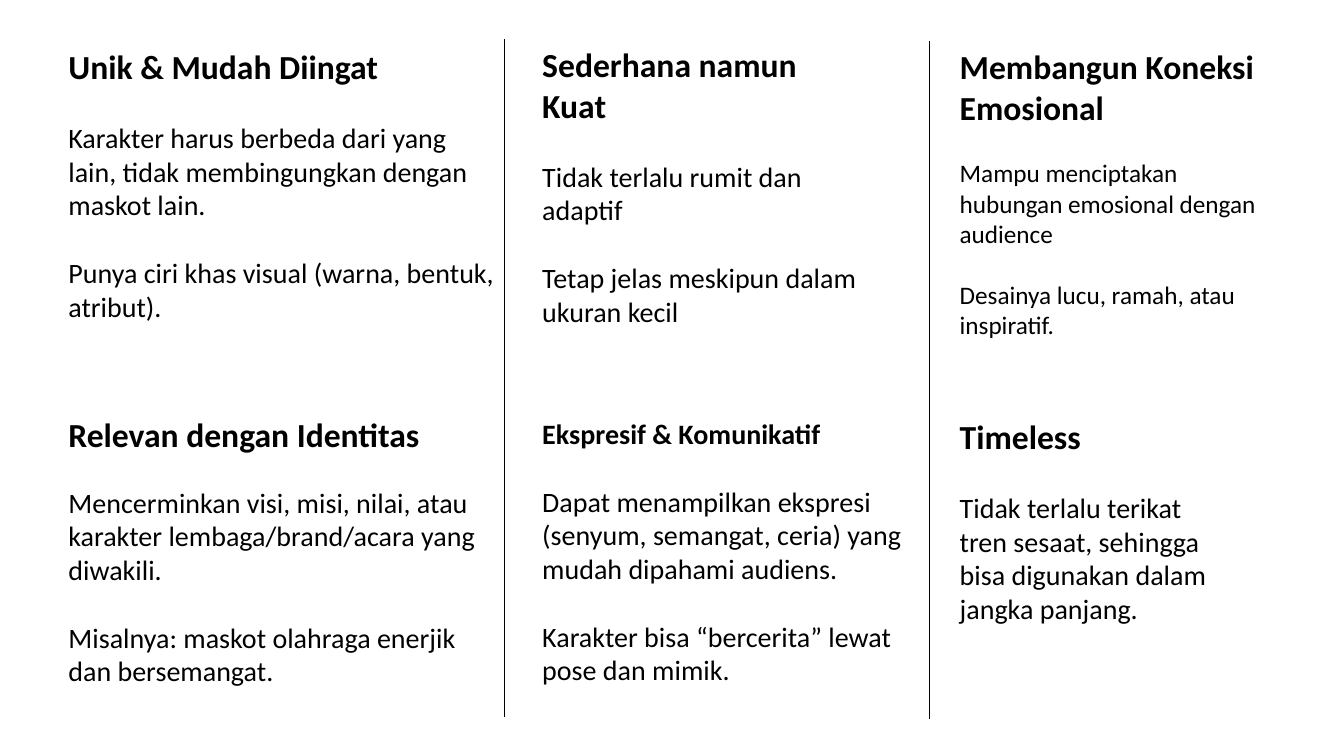
from pptx import Presentation
from pptx.dml.color import RGBColor
from pptx.enum import shapes, text
from pptx.oxml import xmlchemy
from pptx.util import Inches, Pt

COLORS = {"ink": "000000"}
FONT = "Calibri"
LINE_HEIGHT = 1.22

# left, top, width, height, heading size, body size, heading gap, heading, body
TRAITS = [
    (0.58, 0.41, 4.42, 2.86, 24, 20, 24.4, "Unik & Mudah Diingat", [
        "Karakter harus berbeda dari yang lain, tidak membingungkan dengan maskot lain.",
        "Punya ciri khas visual (warna, bentuk, atribut)."]),
    (0.58, 4.06, 4.42, 2.83, 24, 20, 22, "Relevan dengan Identitas", [
        "Mencerminkan visi, misi, nilai, atau karakter lembaga/brand/acara yang diwakili.",
        "Misalnya: maskot olahraga enerjik dan bersemangat."]),
    (5.28, 0.39, 3.37, 2.93, 24, 20, 24.4, "Sederhana namun Kuat", [
        "Tidak terlalu rumit dan adaptif",
        "Tetap jelas meskipun dalam ukuran kecil"]),
    (5.28, 4.08, 3.93, 2.79, 20, 20, 24.4, "Ekspresif & Komunikatif", [
        "Dapat menampilkan ekspresi (senyum, semangat, ceria) yang mudah dipahami audiens.",
        "Karakter bisa “bercerita” lewat pose dan mimik."]),
    (9.42, 0.41, 3.37, 3.03, 24, 18, 22, "Membangun Koneksi Emosional", [
        "Mampu menciptakan hubungan emosional dengan audience",
        "Desainya lucu, ramah, atau inspiratif."]),
    (9.42, 4.08, 2.82, 2.19, 24, 20, 24.4, "Timeless", [
        "Tidak terlalu terikat tren sesaat, sehingga bisa digunakan dalam jangka panjang."]),
]
DIVIDERS = [(5, 0.39), (9.22, 0.41)]
DIVIDER_HEIGHT = 6.72


def style_paragraph(para, size, bold):
    for span in para.runs:
        span.font.name = FONT
        span.font.size = Pt(size)
        span.font.bold = bold
        span.font.color.rgb = RGBColor.from_string(COLORS["ink"])


def add_trait(page, left, top, width, height, heading_size, body_size,
              heading_gap, heading, body):
    box = page.shapes.add_textbox(Inches(left), Inches(top), Inches(width), Inches(height))
    frame = box.text_frame
    frame.text = "\n".join([heading, *body])
    frame.word_wrap = True
    frame.auto_size = text.MSO_AUTO_SIZE.SHAPE_TO_FIT_TEXT
    title, *details = frame.paragraphs
    style_paragraph(title, heading_size, True)
    for index, para in enumerate(details):
        para.space_before = Pt(body_size * LINE_HEIGHT if index else heading_gap)
        style_paragraph(para, body_size, False)


def add_divider(page, left, top):
    line = page.shapes.add_connector(
        shapes.MSO_CONNECTOR.STRAIGHT, Inches(left), Inches(top),
        Inches(left), Inches(top + DIVIDER_HEIGHT))
    line.line.color.rgb = RGBColor.from_string(COLORS["ink"])
    line.line.width = Pt(0.5)
    properties = line._element.spPr
    properties.append(xmlchemy.OxmlElement("a:effectLst"))


def main():
    deck = Presentation()
    deck.slide_width, deck.slide_height = Inches(13.33), Inches(7.5)
    page = deck.slides.add_slide(deck.slide_layouts[6])
    for trait in TRAITS:
        add_trait(page, *trait)
    for divider in DIVIDERS:
        add_divider(page, *divider)
    deck.save("out.pptx")


if __name__ == "__main__":
    main()
